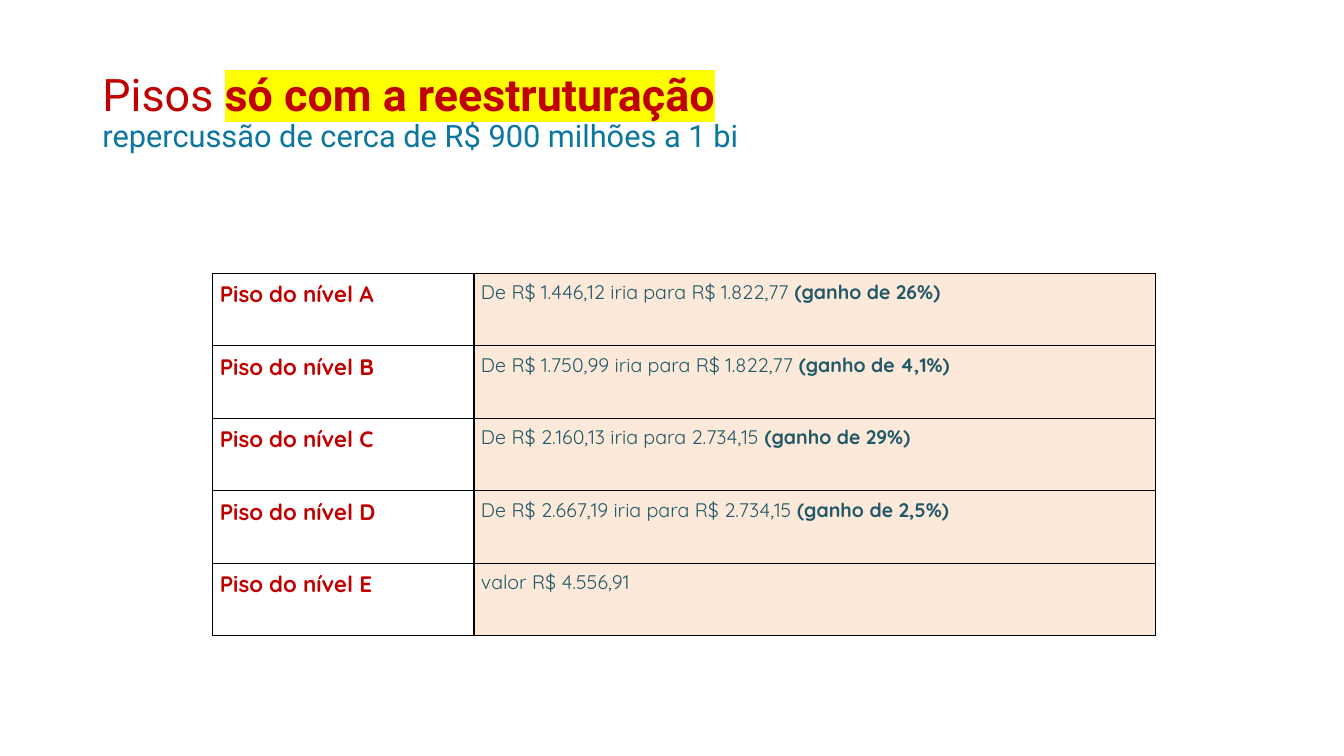
from lxml import etree
from pptx import Presentation
from pptx import util as u
from pptx.dml.color import RGBColor
from pptx.enum import text as t
from pptx.oxml import ns

RED, BLUE, TEAL = "C00000", "0B76A0", "215968"
PEACH, YELLOW, BLACK = "FDE9D9", "FFFF00", "000000"

FLOORS = [
    ("A", "De R$ 1.446,12 iria para R$ 1.822,77 ", "(ganho de 26%)"),
    ("B", "De R$ 1.750,99 iria para R$ 1.822,77 ", "(ganho de 4,1%)"),
    ("C", "De R$ 2.160,13 iria para 2.734,15 ", "(ganho de 29%)"),
    ("D", "De R$ 2.667,19 iria para R$ 2.734,15 ", "(ganho de 2,5%)"),
    ("E", "valor R$ 4.556,91", ""),
]


def color(value):
    return RGBColor.from_string(value)


def add_solid(parent, tag, value):
    """Append a tag holding an sRGB colour and return it."""
    node = etree.SubElement(parent, ns.qn(tag))
    etree.SubElement(node, ns.qn("a:srgbClr"), val=value)
    return node


def add_text(para, words, *, font, size, fill, bold=False, highlight=None):
    span = para.add_run()
    span.text = words
    span.font.size = u.Pt(size)
    span.font.bold = bold
    span.font.color.rgb = color(fill)
    if highlight:
        # The highlight has to stand between the fill and the typeface
        add_solid(span.font._element, "a:highlight", highlight)
    span.font.name = font


def add_borders(cell, value, width):
    props = cell._tc.get_or_add_tcPr()
    for index, side in enumerate(("a:lnL", "a:lnR", "a:lnT", "a:lnB")):
        line = etree.Element(ns.qn(side), w=str(u.Pt(width)))
        add_solid(line, "a:solidFill", value)
        props.insert(index, line)


def fill_title(page, left, top, width, height):
    box = page.shapes.title
    box.left, box.top, box.width, box.height = map(u.Pt, (left, top, width, height))
    frame = box.text_frame
    frame.word_wrap = True
    frame.auto_size = t.MSO_AUTO_SIZE.NONE
    frame.vertical_anchor = t.MSO_ANCHOR.MIDDLE
    para = frame.paragraphs[0]
    para.alignment = t.PP_ALIGN.LEFT
    para.line_spacing = 0.9
    add_text(para, "Pisos ", font="Roboto", size=32, fill=RED)
    add_text(para, "só com a reestruturação", font="Roboto", size=32, fill=RED,
             bold=True, highlight=YELLOW)
    para.add_line_break()
    add_text(para, "repercussão de cerca de R$ 900 milhões a 1 bi",
             font="Roboto", size=22, fill=BLUE)


def add_floor_table(page, left, top, width, height):
    frame = page.shapes.add_table(len(FLOORS), 2, *map(u.Pt, (left, top, width, height)))
    table = frame.table
    table.first_row = table.horz_banding = False
    label_width = 186.6
    table.columns[0].width = u.Pt(label_width)
    table.columns[1].width = u.Pt(width - label_width)

    for row, (level, change, gain) in enumerate(FLOORS):
        label, detail = table.cell(row, 0), table.cell(row, 1)
        for cell in (label, detail):
            cell.margin_left = cell.margin_right = u.Pt(5)
            cell.margin_top = cell.margin_bottom = u.Pt(5)
            add_borders(cell, BLACK, 1)
        # Level name
        label.fill.background()
        add_text(label.text_frame.paragraphs[0], f"Piso do nível {level}",
                 font="Quicksand", size=16, fill=RED, bold=True)
        # Change in pay and gain
        detail.fill.solid()
        detail.fill.fore_color.rgb = color(PEACH)
        para = detail.text_frame.paragraphs[0]
        add_text(para, change, font="Quicksand", size=14, fill=TEAL)
        if gain:
            add_text(para, gain, font="Quicksand", size=14, fill=TEAL, bold=True)


def main():
    deck = Presentation()
    deck.slide_width, deck.slide_height = u.Pt(960), u.Pt(540)
    page = deck.slides.add_slide(deck.slide_layouts[5])
    fill_title(page, 66, 28.75, 828, 104.4)
    add_floor_table(page, 152, 195.2, 673.4, 259)
    deck.save("out.pptx")


if __name__ == "__main__":
    main()
